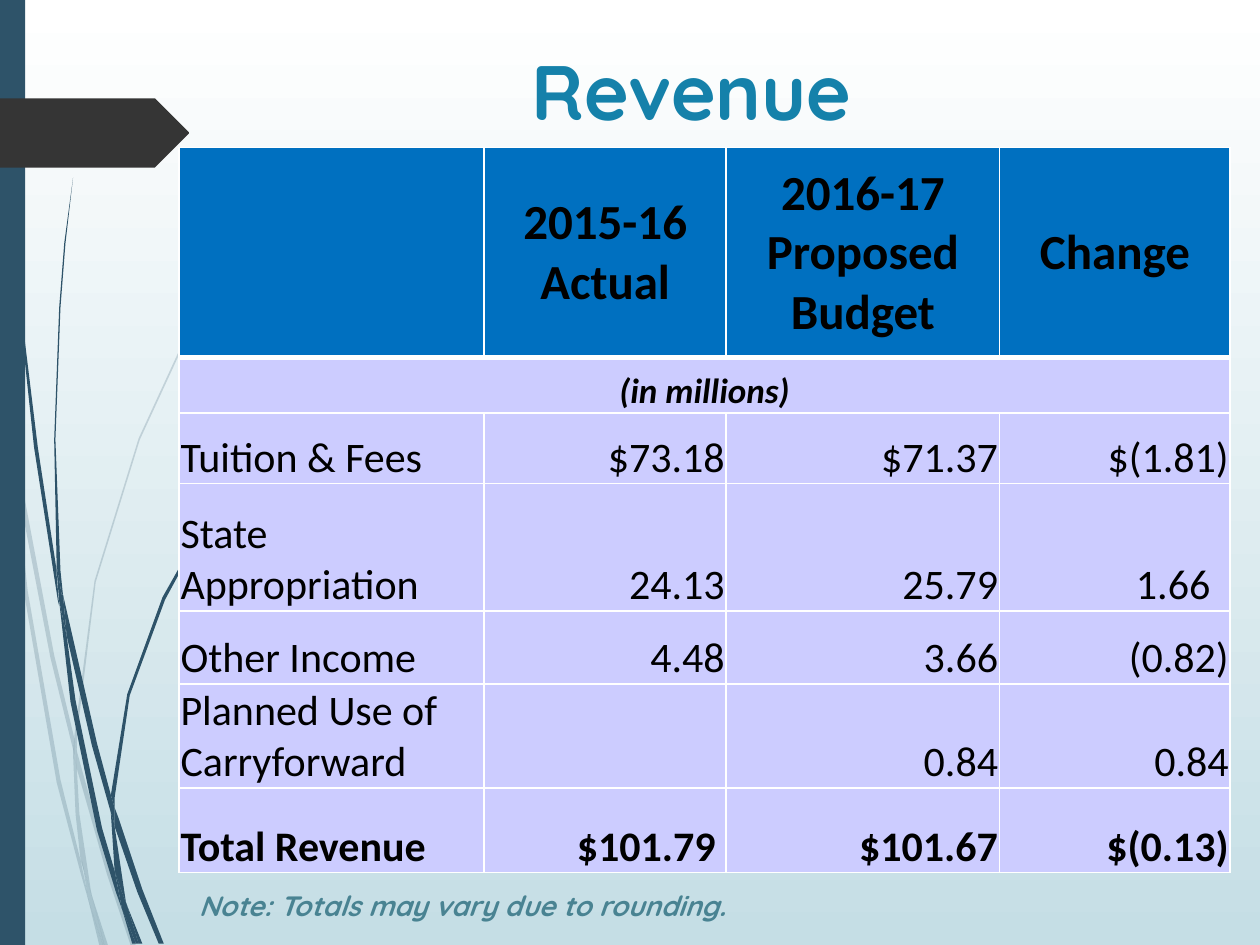
import dataclasses

import lxml.etree
import pptx
import pptx.dml.color
import pptx.enum.shapes
import pptx.enum.text
import pptx.oxml.ns
import pptx.util

Cm = pptx.util.Cm
Pt = pptx.util.Pt
ALIGN = pptx.enum.text.PP_ALIGN
ANCHOR = pptx.enum.text.MSO_ANCHOR

COLORS = {
    "white": "FFFFFF", "mist": "C5DEE5", "slate": "2E5369", "charcoal": "353535",
    "header": "0070C0", "body": "CCCCFF", "black": "000000",
    "title": "1581AA", "note": "498392",
}
GRID = Cm(0.0254)  # one unit of the outline points below

# Outlines of the grass blades, each a closed ring of points in GRID units
PALE_BLADES = [
    [(8, 350), (6, 322), (0, 282), (0, 299), (7, 344)],
    [(40, 522), (59, 599), (59, 586), (43, 520), (10, 345), (12, 376)],
    [(64, 607), (61, 596), (61, 610), (85, 694), (104, 751), (108, 751), (88, 692)],
    [(83, 751), (86, 751), (73, 711)],
    [(64, 683), (48, 619), (22, 469), (12, 376), (8, 350), (19, 470), (45, 621),
     (64, 693), (70, 714), (69, 707)],
    [(58, 599), (60, 646), (64, 683), (67, 692), (73, 711), (72, 706), (63, 646),
     (61, 610), (61, 608)],
    [(61, 584), (76, 462), (111, 349), (159, 245), (187, 198), (201, 175), (217, 154),
     (217, 153), (201, 175), (186, 197), (158, 244), (110, 348), (75, 461), (59, 584),
     (59, 586), (61, 596)],
    [(70, 714), (79, 751), (82, 751)],
    [(61, 608), (61, 610), (61, 596), (59, 586), (58, 599)],
    [(67, 692), (65, 683), (69, 707), (70, 714), (82, 751), (83, 751), (73, 711)],
]
DARK_BLADES = [
    [(5, 110), (14, 233), (27, 355), (46, 477), (47, 481), (45, 457), (45, 453),
     (30, 355), (15, 232), (6, 109), (4, 48), (3, 0), (2, 0), (3, 48)],
    [(73, 592), (88, 645), (88, 633), (88, 631), (77, 590), (50, 472), (53, 505)],
    [(94, 649), (91, 641), (91, 656), (109, 708), (126, 749), (130, 749), (113, 706)],
    [(91, 691), (81, 657), (60, 556), (53, 505), (47, 477), (56, 557), (77, 659),
     (92, 708), (97, 722), (96, 717)],
    [(50, 472), (48, 453), (44, 349), (48, 244), (52, 193), (58, 141), (51, 193),
     (47, 244), (43, 349), (45, 449), (49, 472)],
    [(110, 749), (113, 749), (101, 719)],
    [(47, 477), (53, 505), (50, 472), (49, 472), (45, 449), (45, 453)],
    [(91, 633), (103, 552), (131, 476), (169, 406), (191, 374), (203, 359), (216, 344),
     (215, 344), (203, 358), (191, 373), (168, 405), (129, 474), (101, 551), (88, 631),
     (91, 641)],
    [(97, 722), (105, 749), (108, 749)],
    [(88, 645), (91, 691), (96, 706), (101, 719), (100, 716), (91, 656), (90, 651)],
    [(88, 645), (90, 651), (91, 656), (91, 641), (88, 631), (88, 633)],
    [(96, 706), (91, 691), (96, 717), (97, 722), (108, 749), (110, 749), (101, 719)],
]
ARROW = [(149, 107), (124, 132), (123, 133), (0, 133), (0, 78), (123, 78), (124, 79),
         (149, 104), (150, 105), (150, 106)]


@dataclasses.dataclass
class TextStyle:
    size: int
    font: str = "Calibri"
    color: str = "black"
    bold: bool = False
    italic: bool = False


@dataclasses.dataclass
class RevenueRow:
    height: float
    texts: tuple
    style: TextStyle
    fill: str = "body"
    anchor: ANCHOR = ANCHOR.BOTTOM
    centered: bool = False


HEADER = TextStyle(28, bold=True)
UNIT = TextStyle(20, bold=True, italic=True)
ITEM = TextStyle(24)
TOTAL = TextStyle(24, bold=True)

COLUMN_WIDTHS = (6.15, 4.88, 5.51, 4.65)
REVENUE_ROWS = [
    RevenueRow(4.24, ("", "2015-16 Actual", "2016-17 Proposed Budget", "Change"),
               HEADER, "header", ANCHOR.MIDDLE, True),
    RevenueRow(1.12, ("(in millions)", "", "", ""), UNIT, centered=True),
    RevenueRow(1.42, ("Tuition & Fees", "$73.18", "$71.37", "$(1.81)"), ITEM),
    RevenueRow(2.57, ("State Appropriation", "24.13", "25.79", "1.66"), ITEM),
    RevenueRow(1.47, ("Other Income", "4.48", "3.66", "(0.82)"), ITEM),
    RevenueRow(1.47, ("Planned Use of Carryforward", "", "0.84", "0.84"), ITEM),
    RevenueRow(1.7, ("Total Revenue", "$101.79", "$101.67", "$(0.13)"), TOTAL),
]
RIGHT_INSETS = {"1.66": 0.4, "$101.79": 0.21}  # figures set in from the edge


def rgb(name: str) -> pptx.dml.color.RGBColor:
    return pptx.dml.color.RGBColor.from_string(COLORS[name])


def paint(shape, color: str, opacity: int = 100) -> None:
    shape.shadow.inherit = False
    shape.fill.solid()
    shape.fill.fore_color.rgb = rgb(color)
    shape.line.fill.background()
    if opacity < 100:
        color_element = shape.fill._xPr.find(".//" + pptx.oxml.ns.qn("a:srgbClr"))
        alpha = lxml.etree.SubElement(color_element, pptx.oxml.ns.qn("a:alpha"))
        alpha.set("val", str(opacity * 1000))


def add_outline(shapes, points: list, color: str, opacity: int = 100) -> None:
    builder = shapes.build_freeform(*points[0], scale=GRID)
    builder.add_line_segments(points[1:], close=True)
    paint(builder.convert_to_shape(), color, opacity)


def add_run(paragraph, text: str, style: TextStyle) -> None:
    run = paragraph.add_run()
    run.text = text
    run.font.name = style.font
    run.font.size = Pt(style.size)
    run.font.bold = style.bold
    run.font.italic = style.italic
    run.font.color.rgb = rgb(style.color)


def add_label(slide, box: tuple, text: str, style: TextStyle, align: ALIGN,
              wrap: bool) -> None:
    frame = slide.shapes.add_textbox(*map(Cm, box)).text_frame
    frame.word_wrap = wrap
    frame.vertical_anchor = ANCHOR.MIDDLE
    frame.paragraphs[0].alignment = align
    add_run(frame.paragraphs[0], text, style)


def set_borders(cell, top: int, bottom: int) -> None:
    properties = cell._tc.get_or_add_tcPr()
    widths = {"a:lnL": 1, "a:lnR": 1, "a:lnT": top, "a:lnB": bottom}
    for position, (tag, width) in enumerate(widths.items()):
        line = lxml.etree.Element(pptx.oxml.ns.qn(tag), w=str(Pt(width)))
        fill = lxml.etree.SubElement(line, pptx.oxml.ns.qn("a:solidFill"))
        lxml.etree.SubElement(fill, pptx.oxml.ns.qn("a:srgbClr"), val=COLORS["white"])
        properties.insert(position, line)


def add_revenue_table(slide) -> None:
    total_height = sum(row.height for row in REVENUE_ROWS)
    table = slide.shapes.add_table(
        len(REVENUE_ROWS), len(COLUMN_WIDTHS), Cm(3.61), Cm(2.97),
        Cm(sum(COLUMN_WIDTHS)), Cm(total_height)).table
    table.horz_banding = False
    for column, width in zip(table.columns, COLUMN_WIDTHS):
        column.width = Cm(width)
    for row_index, row in enumerate(REVENUE_ROWS):
        table.rows[row_index].height = Cm(row.height)
        for column_index, text in enumerate(row.texts):
            cell = table.cell(row_index, column_index)
            cell.fill.solid()
            cell.fill.fore_color.rgb = rgb(row.fill)
            set_borders(cell, 3 if row_index == 1 else 1, 3 if row_index == 0 else 1)
            cell.vertical_anchor = row.anchor
            cell.margin_left = cell.margin_top = Cm(0.03)
            cell.margin_right = Cm(RIGHT_INSETS.get(text, 0.03))
            cell.margin_bottom = 0
            if text:
                paragraph = cell.text_frame.paragraphs[0]
                side = ALIGN.RIGHT if column_index else ALIGN.LEFT
                paragraph.alignment = ALIGN.CENTER if row.centered else side
                add_run(paragraph, text, row.style)
    table.cell(1, 0).merge(table.cell(1, len(COLUMN_WIDTHS) - 1))


def main() -> None:
    presentation = pptx.Presentation()
    presentation.slide_width, presentation.slide_height = Cm(25.4), Cm(19.05)
    slide = presentation.slides.add_slide(presentation.slide_layouts[6])

    # Background gradient, from top to bottom
    background = slide.background.fill
    background.gradient()
    background.gradient_angle = 270
    for stop, color in zip(background.gradient_stops, ("white", "mist")):
        stop.color.rgb = rgb(color)

    # Grass blades, side band and arrow
    for blades, opacity in ((PALE_BLADES, 20), (DARK_BLADES, 100)):
        group = slide.shapes.add_group_shape()
        for points in blades:
            add_outline(group.shapes, points, "slate", opacity)
    band = slide.shapes.add_shape(pptx.enum.shapes.MSO_SHAPE.RECTANGLE,
                                  0, 0, Cm(0.51), presentation.slide_height)
    paint(band, "slate")
    add_outline(slide.shapes, ARROW, "charcoal")

    # Table, note and title
    add_revenue_table(slide)
    add_label(slide, (3.76, 17.78, 11.38, 0.94), "Note: Totals may vary due to rounding.",
              TextStyle(16, "Quicksand", "note", True, True), ALIGN.LEFT, False)
    add_label(slide, (5.03, 0.64, 17.83, 2.34), "Revenue",
              TextStyle(44, "Quicksand", "title", True), ALIGN.CENTER, True)

    presentation.save("out.pptx")


if __name__ == "__main__":
    main()
